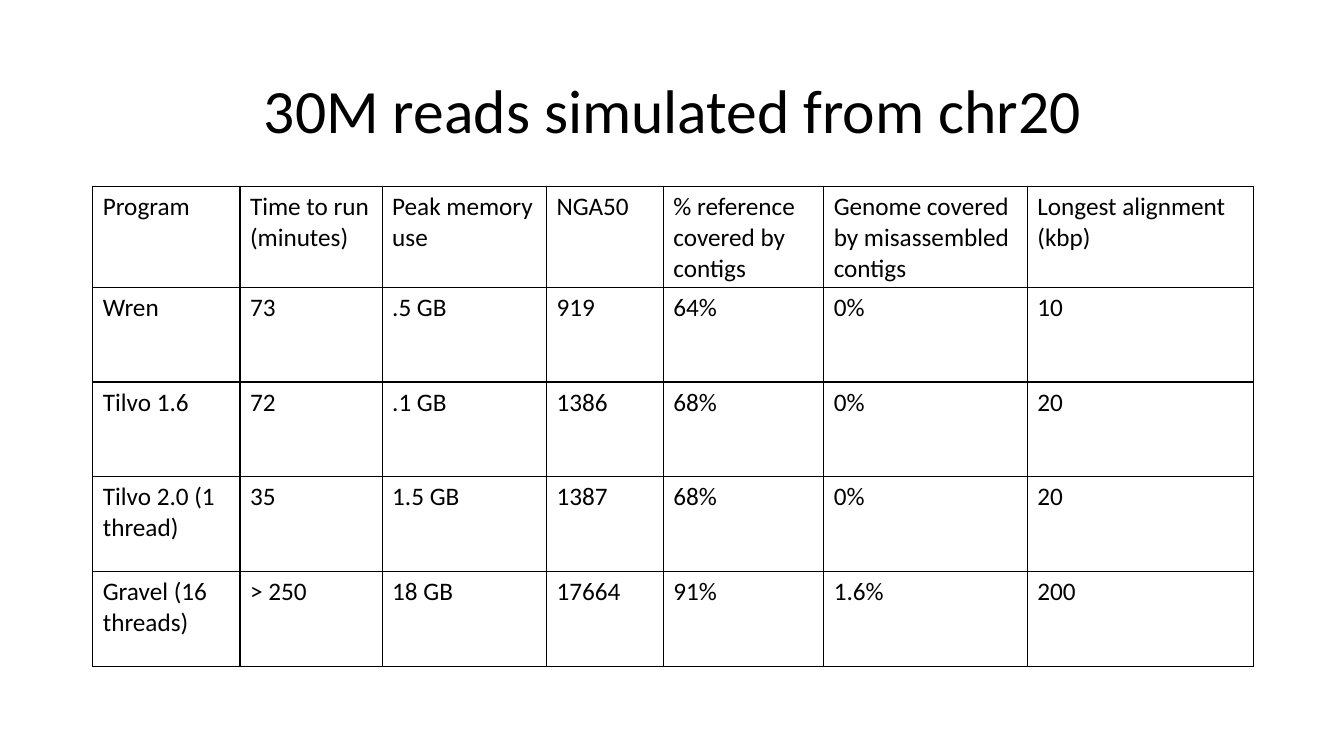
from lxml import etree
from pptx import Presentation
from pptx.dml.color import RGBColor
from pptx.enum.text import MSO_ANCHOR, PP_ALIGN
from pptx.oxml.ns import qn
from pptx.util import Inches, Pt

MIDDLE, CENTER = MSO_ANCHOR.MIDDLE, PP_ALIGN.CENTER

TITLE = "30M reads simulated from chr20"
HEADER = ["Program", "Time to run (minutes)", "Peak memory use", "NGA50",
          "% reference covered by contigs",
          "Genome covered by misassembled contigs", "Longest alignment (kbp)"]
RESULTS = [
    ["Wren", "73", ".5 GB", "919", "64%", "0%", "10"],
    ["Tilvo 1.6", "72", ".1 GB", "1386", "68%", "0%", "20"],
    ["Tilvo 2.0 (1 thread)", "35", "1.5 GB", "1387", "68%", "0%", "20"],
    ["Gravel (16 threads)", "> 250", "18 GB", "17664", "91%", "1.6%", "200"],
]
COLUMN_WIDTHS = [1.46, 1.41, 1.63, 1.16, 1.59, 2.02, 2.24]

COLORS = {"ink": "000000", "paper": "FFFFFF"}
FONT = "Calibri"
SLIDE_WIDTH, SLIDE_HEIGHT = 13.33, 7.5
MARGIN = 0.92
CONTENT_WIDTH = sum(COLUMN_WIDTHS)
TITLE_TOP, TITLE_HEIGHT = 0.4, 1.45
TABLE_TOP = TITLE_TOP + TITLE_HEIGHT
ROW_HEIGHT = 0.94
BORDER = Pt(1)


def style_text(paragraph, size):
    paragraph.font.name = FONT
    paragraph.font.size = Pt(size)
    paragraph.font.bold = False
    paragraph.font.color.rgb = RGBColor.from_string(COLORS["ink"])


def add_borders(cell):
    properties = cell._tc.get_or_add_tcPr()
    for position, side in enumerate(("a:lnL", "a:lnR", "a:lnT", "a:lnB")):
        line = etree.Element(qn(side), w=str(BORDER))
        fill = etree.SubElement(line, qn("a:solidFill"))
        etree.SubElement(fill, qn("a:srgbClr"), val=COLORS["ink"])
        properties.insert(position, line)  # borders must precede the fill


def add_title(page):
    box = page.shapes.add_textbox(Inches(MARGIN), Inches(TITLE_TOP),
                                  Inches(CONTENT_WIDTH), Inches(TITLE_HEIGHT))
    frame = box.text_frame
    frame.word_wrap = True
    frame.vertical_anchor = MIDDLE
    para = frame.paragraphs[0]
    para.text = TITLE
    para.alignment = CENTER
    para.line_spacing = 0.9
    style_text(para, 44)


def add_results_table(page):
    rows = [HEADER] + RESULTS
    table = page.shapes.add_table(
        len(rows), len(HEADER), Inches(MARGIN), Inches(TABLE_TOP),
        Inches(CONTENT_WIDTH), Inches(ROW_HEIGHT * len(rows))).table
    table.first_row = table.horz_banding = False
    for column, width in zip(table.columns, COLUMN_WIDTHS):
        column.width = Inches(width)
    for row, values in zip(table.rows, rows):
        row.height = Inches(ROW_HEIGHT)
        for cell, value in zip(row.cells, values):
            cell.fill.background()
            add_borders(cell)
            para = cell.text_frame.paragraphs[0]
            para.text = value
            style_text(para, 18)


def main():
    deck = Presentation()
    deck.slide_width, deck.slide_height = Inches(SLIDE_WIDTH), Inches(SLIDE_HEIGHT)
    page = deck.slides.add_slide(deck.slide_layouts[6])
    page.background.fill.solid()
    page.background.fill.fore_color.rgb = RGBColor.from_string(COLORS["paper"])
    add_title(page)
    add_results_table(page)
    deck.save("out.pptx")


if __name__ == "__main__":
    main()
